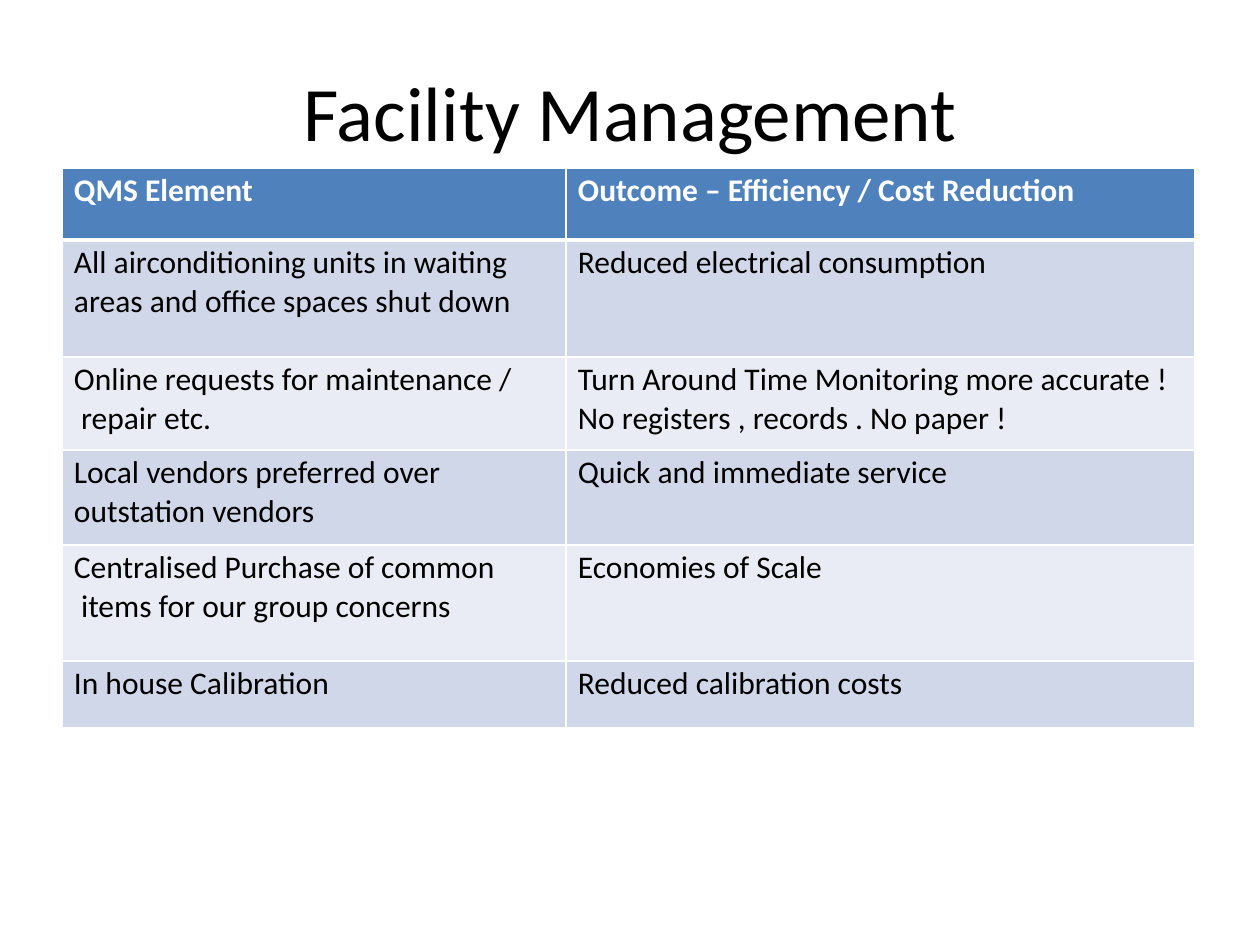
"""Build the Facility Management slide: a title above a two-column table."""
from lxml import etree
from pptx import Presentation
from pptx import util as u
from pptx.dml.color import RGBColor
from pptx.enum import text
from pptx.oxml import ns

PX = 914400 / 126
THEME = {
    "font": "Calibri", "title": 44, "body": 18,
    "ink": "000000", "white": "FFFFFF", "head": "4F81BC",
    "bands": ("E9ECF4", "D0D7E8"),
}
ROWS = [
    (72, "QMS Element", "Outcome – Efficiency / Cost Reduction"),
    (117, "All airconditioning units in waiting\vareas and office spaces shut down",
     "Reduced electrical consumption"),
    (93, "Online requests for maintenance /\v repair etc.",
     "Turn Around Time Monitoring more accurate !\vNo registers , records . No paper !"),
    (95, "Local vendors preferred over\voutstation vendors", "Quick and immediate service"),
    (116, "Centralised Purchase of common\v items for our group concerns", "Economies of Scale"),
    (67, "In house Calibration", "Reduced calibration costs"),
]
COLS = (504, 629)


def px(n):
    return u.Emu(round(n * PX))


def style(frame, size, color, bold, gap):
    para = frame.paragraphs[0]
    para.space_before = u.Pt(gap)
    for run in para.runs:
        look = {"name": THEME["font"], "size": u.Pt(size), "bold": bold}
        for key, val in look.items():
            setattr(run.font, key, val)
        run.font.color.rgb = RGBColor.from_string(color)


deck = Presentation()
deck.slide_width, deck.slide_height = px(1260), px(945)
slide = deck.slides.add_slide(deck.slide_layouts[5])

title = slide.shapes.title
for key, val in {"left": 301, "top": 64, "width": 659, "height": 96}.items():
    setattr(title, key, px(val))
frame = title.text_frame
frame.text = "Facility Management"
pads = {"margin_left": 0, "margin_right": 0, "margin_top": px(1), "margin_bottom": 0}
for key, val in {**pads, "word_wrap": False, "vertical_anchor": text.MSO_ANCHOR.TOP}.items():
    setattr(frame, key, val)
style(frame, THEME["title"], THEME["ink"], False, 1.1)

high = sum(row[0] for row in ROWS)
table = slide.shapes.add_table(
    len(ROWS), len(COLS), px(62), px(168), px(sum(COLS)), px(high)).table
for col, wide in zip(table.columns, COLS):
    col.width = px(wide)

pads.update(margin_left=px(12), margin_top=px(4))
for r, (tall, *words) in enumerate(ROWS):
    table.rows[r].height = px(tall)
    for c, word in enumerate(words):
        cell = table.cell(r, c)
        cell.text_frame.text = word
        for key, val in pads.items():
            setattr(cell, key, val)
        style(cell.text_frame, THEME["body"], THEME["ink" if r else "white"], r == 0, 2.4)
        cell.fill.solid()
        fill = THEME["bands"][r % 2] if r else THEME["head"]
        cell.fill.fore_color.rgb = RGBColor.from_string(fill)
        props = cell._tc.get_or_add_tcPr()
        edges = {"L": 1, "R": 1, "T": 3 if r == 1 else 1, "B": 1 if r else 3}
        for spot, (side, thick) in enumerate(edges.items()):
            line = etree.Element(ns.qn(f"a:ln{side}"), w=str(u.Pt(thick)))
            solid = etree.SubElement(line, ns.qn("a:solidFill"))
            etree.SubElement(solid, ns.qn("a:srgbClr"), val=THEME["white"])
            props.insert(spot, line)

deck.save("out.pptx")
